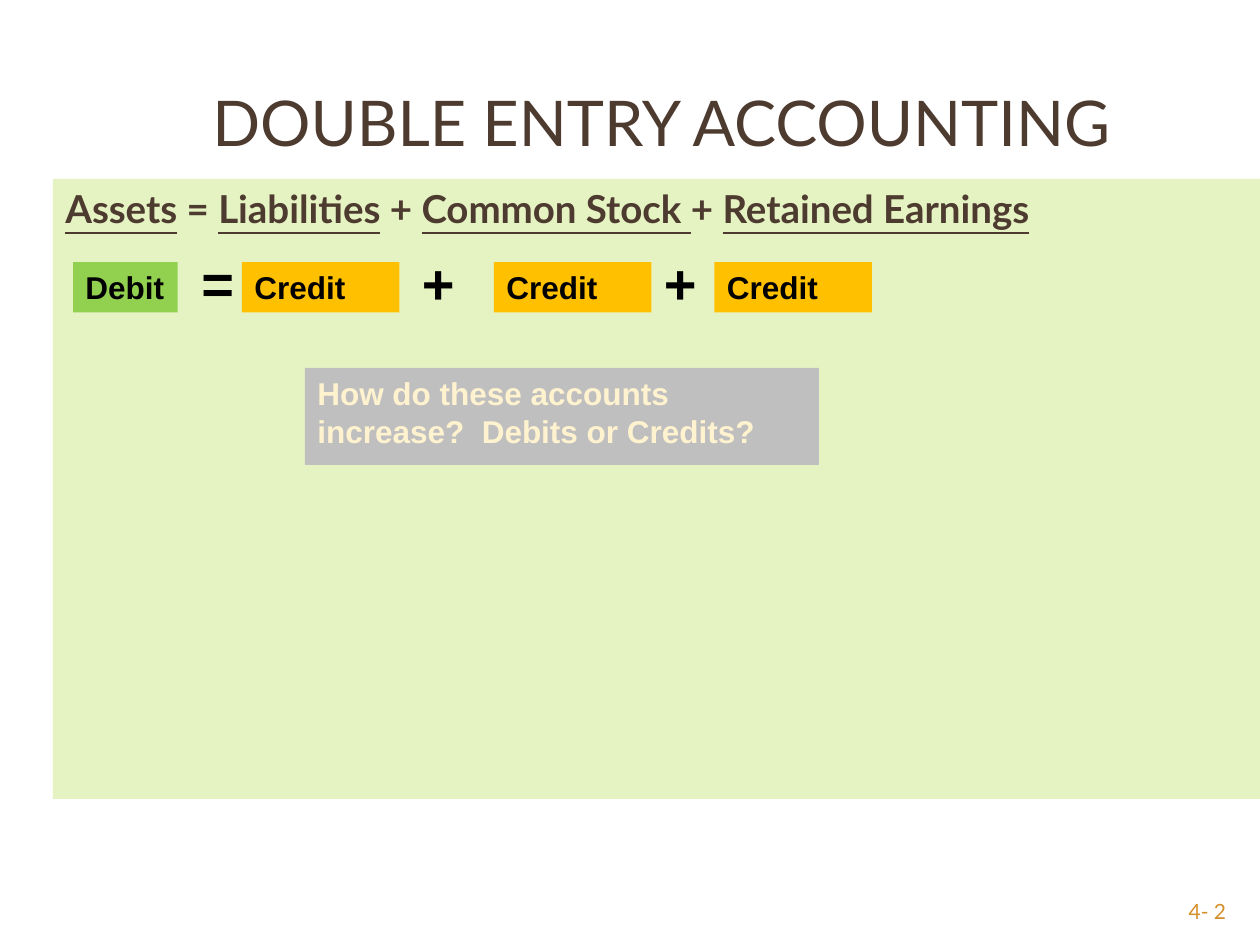
from dataclasses import dataclass
from pptx import Presentation
from pptx.dml.color import RGBColor
from pptx.enum.text import MSO_ANCHOR, PP_ALIGN
from pptx.util import Inches, Pt

TOP, MIDDLE = MSO_ANCHOR.TOP, MSO_ANCHOR.MIDDLE
LEFT, CENTER, RIGHT = PP_ALIGN.LEFT, PP_ALIGN.CENTER, PP_ALIGN.RIGHT


@dataclass(frozen=True)
class Theme:
    heading_font: str = "Lato"
    label_font: str = "Arial"
    brown: str = "4E3B30"
    black: str = "000000"
    cream: str = "FFF2CF"
    amber: str = "D48F29"
    panel: str = "E5F3C3"
    gray: str = "BFBFBF"
    debit: str = "92D050"
    credit: str = "FFC000"
    title_size: int = 36
    equation_size: int = 22
    label_size: int = 18
    sign_size: int = 32
    number_size: int = 12


theme = Theme()


def write(box, text, *, size, color, font=theme.label_font, bold=True,
          align=LEFT, anchor=TOP, underlined=()):
    frame = box.text_frame
    frame.word_wrap = True
    frame.vertical_anchor = anchor
    para = frame.paragraphs[0]
    para.alignment = align
    for part in [text] if isinstance(text, str) else text:
        span = para.add_run()
        span.text = part
        span.font.name = font
        span.font.size = Pt(size)
        span.font.bold = bold
        span.font.underline = part in underlined
        span.font.color.rgb = RGBColor.from_string(color)


def add_box(page, left, top, width, height, fill=None):
    box = page.shapes.add_textbox(Inches(left), Inches(top), Inches(width), Inches(height))
    if fill:
        box.fill.solid()
        box.fill.fore_color.rgb = RGBColor.from_string(fill)
    return box


deck = Presentation()
deck.slide_width, deck.slide_height = Inches(10), Inches(7.5)
page = deck.slides.add_slide(deck.slide_layouts[5])

number = add_box(page, 9, 7.08, 0.83, 0.27)
write(number, "4- 2", size=theme.number_size, color=theme.amber,
      font=theme.heading_font, bold=False, align=RIGHT)

title = page.shapes.title
title.left, title.top = Inches(0.5), Inches(0.5)
title.width, title.height = Inches(9.5), Inches(0.92)
write(title, "DOUBLE ENTRY ACCOUNTING", size=theme.title_size, color=theme.brown,
      font=theme.heading_font, bold=False, align=CENTER, anchor=MIDDLE)

equation = add_box(page, 0.42, 1.42, 9.58, 4.92, theme.panel)
accounts = ["Assets", "Liabilities", "Common Stock ", "Retained Earnings"]
assets, liabilities, stock, earnings = accounts
write(equation, [assets, " = ", liabilities, " + ", stock, "+ ", earnings],
      size=theme.equation_size, color=theme.brown, font=theme.heading_font,
      underlined=accounts)

question = add_box(page, 2.42, 2.92, 4.08, 0.77, theme.gray)
write(question, "How do these accounts increase?  Debits or Credits?",
      size=theme.label_size, color=theme.cream)

for text, left, width, fill in [
    ("Debit", 0.58, 0.83, theme.debit),
    ("Credit", 1.92, 1.25, theme.credit),
    ("Credit", 3.92, 1.25, theme.credit),
    ("Credit", 5.67, 1.25, theme.credit),
]:
    label = add_box(page, left, 2.08, width, 0.4, fill)
    write(label, text, size=theme.label_size, color=theme.black)

for text, left, width in [("=", 1.5, 0.42), ("+", 3.25, 0.58), ("+", 5.17, 0.58)]:
    sign = add_box(page, left, 1.92, width, 0.64)
    write(sign, text, size=theme.sign_size, color=theme.black)

deck.save("out.pptx")
